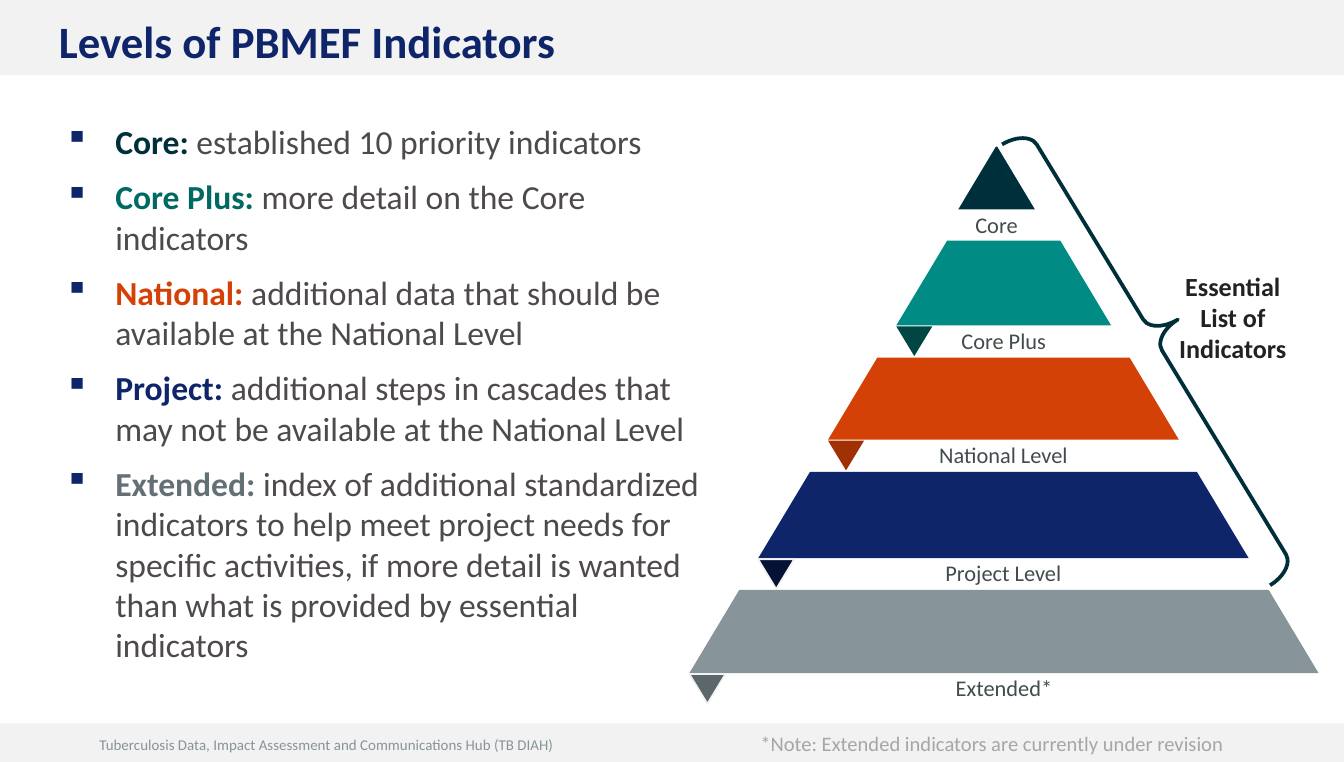
from lxml import etree
from pptx import Presentation
from pptx.dml.color import RGBColor
from pptx.enum.shapes import MSO_SHAPE
from pptx.enum.text import MSO_ANCHOR, PP_ALIGN
from pptx.oxml.ns import qn
from pptx.util import Cm, Pt

RECT = MSO_SHAPE.RECTANGLE
BRACE = MSO_SHAPE.RIGHT_BRACE
LEFT, CENTER = PP_ALIGN.LEFT, PP_ALIGN.CENTER
TOP, MIDDLE, BOTTOM = MSO_ANCHOR.TOP, MSO_ANCHOR.MIDDLE, MSO_ANCHOR.BOTTOM

PALE, NAVY, DARK, GRAY = "F2F2F2", "0E256A", "002F3C", "4E4A49"
SLOPE = 0.6  # sideways run of a tier's edge per unit of height

# Term, colour, description
TERMS = [
    ("Core: ", DARK, "established 10 priority indicators"),
    ("Core Plus: ", "006963", "more detail on the Core indicators"),
    ("National: ", "D44106",
     "additional data that should be available at the National Level"),
    ("Project: ", NAVY, "additional steps in cascades that may not be "
     "available at the National Level"),
    ("Extended: ", "637075", "index of additional standardized indicators to "
     "help meet project needs for specific activities, if more detail is "
     "wanted than what is provided by essential indicators"),
]

# Label, label width, left, top, width, height, colour, fold colour, fold edge
TIERS = [
    ("Core", 1.45, 18.11, 2.77, 1.45, 1.19, DARK, None, None),
    ("Core Plus", 2.51, 16.94, 4.55, 4.06, 1.6, "008C84", "004642", None),
    ("National Level", 4.27, 15.65, 6.76, 6.63, 1.55, "D44106", "9F3105", None),
    ("Project Level", 3.38, 14.33, 8.92, 9.27, 1.63, NAVY, "061235", PALE),
    ("Extended*", 2.97, 13.03, 11.15, 11.89, 1.57, "879499", "5C676C", PALE),
]


def color(code):
    return RGBColor.from_string(code)


class Deck:
    font = "Calibri"

    def __init__(self, wide, high):
        self.prs = Presentation()
        self.prs.slide_width, self.prs.slide_height = Cm(wide), Cm(high)
        self.slide = self.prs.slides.add_slide(self.prs.slide_layouts[5])
        self.shapes = self.slide.shapes

    def style(self, run, size, code, bold=False):
        font = run.font
        font.name, font.size, font.bold = self.font, Pt(size), bold
        font.color.rgb = color(code)

    def paint(self, shape, fill=None, line=None, width=0.89):
        shape.shadow.inherit = False
        if fill:
            shape.fill.solid()
            shape.fill.fore_color.rgb = color(fill)
        else:
            shape.fill.background()
        if line:
            shape.line.color.rgb = color(line)
            shape.line.width = Pt(width)
        else:
            shape.line.fill.background()

    def label(self, shape, text, size, code, bold, align, anchor):
        frame = shape.text_frame
        frame.word_wrap = True
        frame.vertical_anchor = anchor
        frame.text = text
        para = frame.paragraphs[0]
        para.alignment = align
        self.style(para.runs[0], size, code, bold)
        return para

    def title(self, text, x, y, w, h):
        shape = self.shapes.title
        shape.left, shape.top, shape.width, shape.height = map(Cm, (x, y, w, h))
        self.label(shape, text, 24, NAVY, True, LEFT, BOTTOM)
        self.shapes._spTree.append(shape._element)  # bring above the bands

    def bar(self, y, h):
        shape = self.shapes.add_shape(RECT, 0, Cm(y), self.prs.slide_width, Cm(h))
        self.paint(shape, PALE)

    def text(self, text, x, y, w, h, size, code, bold=False, align=LEFT,
             anchor=TOP):
        box = self.shapes.add_textbox(*map(Cm, (x, y, w, h)))
        return self.label(box, text, size, code, bold, align, anchor)

    def list(self, items, x, y, w, h):
        frame = self.shapes.add_textbox(*map(Cm, (x, y, w, h))).text_frame
        frame.word_wrap = True
        for i, (term, code, rest) in enumerate(items):
            para = frame.add_paragraph() if i else frame.paragraphs[0]
            self.bullet(para)
            para.space_after = Pt(8)
            for text, tint, bold in ((term, code, True), (rest, GRAY, False)):
                run = para.add_run()
                run.text = text
                self.style(run, 18, tint, bold)

    def bullet(self, para):
        props = para._p.get_or_add_pPr()
        props.set("marL", str(Cm(0.96)))
        props.set("indent", str(Cm(-0.96)))
        tint = etree.SubElement(props, qn("a:buClr"))
        etree.SubElement(tint, qn("a:srgbClr")).set("val", NAVY)
        etree.SubElement(props, qn("a:buChar")).set("char", "▪")

    def outline(self, points, fill, line=None):
        spots = [(Cm(x), Cm(y)) for x, y in points]
        pen = self.shapes.build_freeform(*spots[0], scale=1.0)
        pen.add_line_segments(spots[1:], close=True)
        self.paint(pen.convert_to_shape(), fill, line)

    def tier(self, label, span, x, y, w, h, fill, fold, edge):
        base, right = y + h, x + w
        run = min(SLOPE * h, w / 2)
        points = [(x, base), (x + run, y), (right - run, y), (right, base)]
        self.outline(points, fill)
        if fold:
            top = base + 0.02
            self.outline([(x + 0.34, top + 0.56), (x, top), (x + 0.68, top)],
                         fold, edge)
        self.text(label, x + (w - span) / 2, base - 0.1, span, 0.76, 12,
                  "424B4E", align=CENTER)

    def brace(self, x, y, w, h, turn, code):
        shape = self.shapes.add_shape(BRACE, *map(Cm, (x, y, w, h)))
        shape.adjustments[0], shape.adjustments[1] = 0.306, 0.467
        shape.rotation = turn
        self.paint(shape, line=code, width=2)


def main():
    deck = Deck(25.4, 14.4)

    # Bands, footer and title
    deck.bar(13.67, 0.73)
    deck.text("Tuberculosis Data, Impact Assessment and Communications Hub "
              "(TB DIAH)", 1.63, 13.77, 12.7, 0.61, 8, "879499", anchor=MIDDLE)
    deck.bar(0, 1.42)
    deck.title("Levels of PBMEF Indicators", 0.86, 0.13, 21.7, 1.27)

    # Definitions and note
    deck.list(TERMS, 0.97, 2.16, 12.6, 10.46)
    note = deck.text("*Note: Extended indicators are currently under revision",
                     13.16, 13.69, 11.56, 0.73, 11, "A6A6A6")
    note._p.get_or_add_pPr().set("marL", str(Cm(0.96)))

    # Pyramid
    for tier in TIERS:
        deck.tier(*tier)

    # Brace over the essential tiers
    deck.brace(21.39, 1.73, 1.12, 9.75, 328.7, DARK)
    deck.text("Essential List of Indicators", 21.79, 4.98, 3.02, 2.06, 14,
              "222222", True, CENTER)

    deck.prs.save("out.pptx")


if __name__ == "__main__":
    main()
